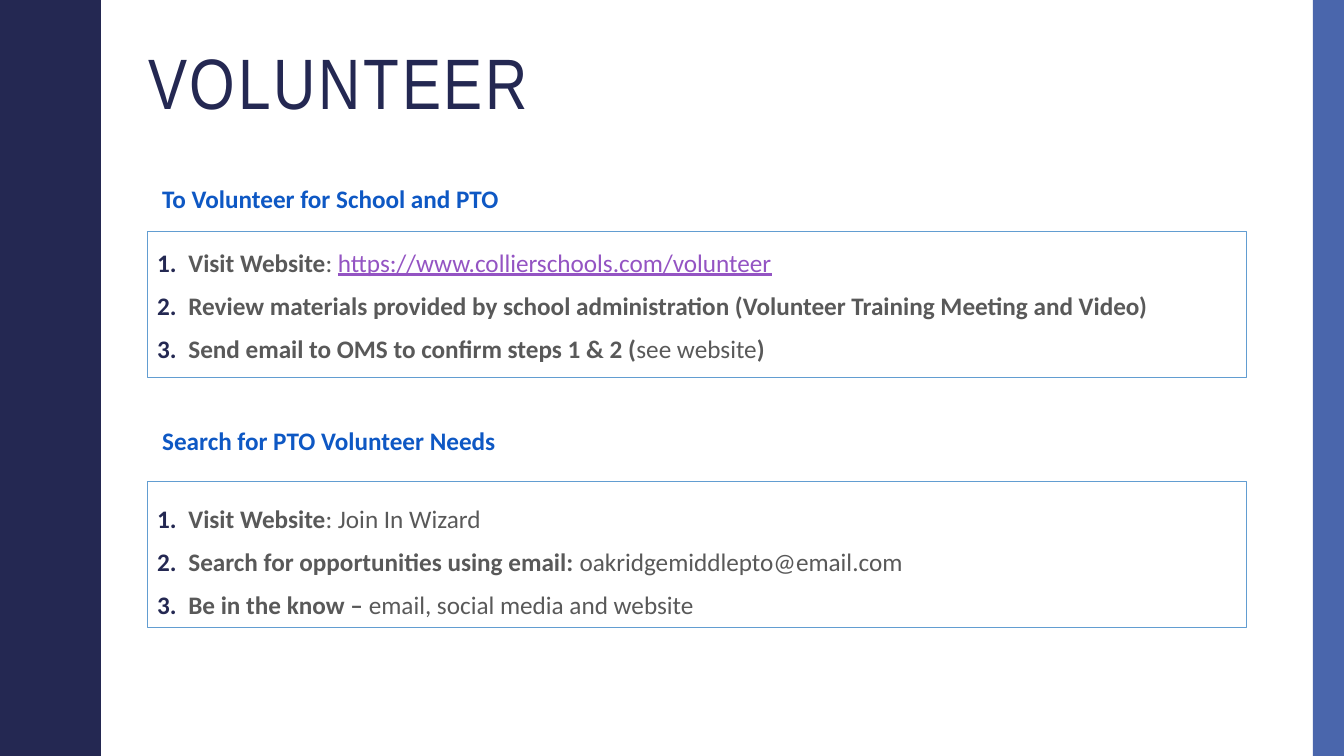
"""Build the volunteer slide: a wavy side band, a title and two numbered lists."""
from dataclasses import dataclass

from lxml import etree
from pptx import Presentation
from pptx import util as u
from pptx.dml.color import RGBColor
from pptx.enum import shapes, text
from pptx.oxml import ns


@dataclass(frozen=True)
class Theme:
    navy: str = "242852"
    blue: str = "4A66AC"
    frame: str = "629DD1"
    heading: str = "0E58C4"
    body: str = "595959"
    link: str = "9454C3"
    title_font: str = "Arial Narrow"
    body_font: str = "Calibri"
    title_size: int = 51
    body_size: int = 18


theme = Theme()


def add_span(para, words, color, bold=False, font=theme.body_font, size=theme.body_size):
    span = para.add_run()
    span.text = words
    span.font.name = font
    span.font.size = u.Pt(size)
    span.font.bold = bold
    span.font.color.rgb = RGBColor.from_string(color)
    return span


def paint(shape, fill=None, line=None):
    shape.shadow.inherit = False
    if fill:
        shape.fill.solid()
        shape.fill.fore_color.rgb = RGBColor.from_string(fill)
    else:
        shape.fill.background()
    if line:
        shape.line.color.rgb = RGBColor.from_string(line)
        shape.line.width = u.Pt(0.75)
    else:
        shape.line.fill.background()


deck = Presentation()
deck.slide_width, deck.slide_height = u.Inches(13.33), u.Inches(7.5)
page = deck.slides.add_slide(deck.slide_layouts[5])

half_wave = [(0.78, 0), (0.78, 0.07), (0.79, 0.14), (0.8, 0.2), (0.81, 0.25),
             (0.83, 0.29), (0.85, 0.33), (0.87, 0.38), (0.89, 0.42), (0.91, 0.46),
             (0.93, 0.5), (0.95, 0.55), (0.96, 0.61), (0.97, 0.68), (0.97, 0.75)]
period = 1.5
full_wave = half_wave + [(x, period - y) for x, y in reversed(half_wave[:-1])]
edge = [(x, y + period * turn) for turn in range(5) for x, y in full_wave]
builder = page.shapes.build_freeform(0, 0, scale=u.Inches(1))
builder.add_line_segments(edge + [(0, 7.5)], close=True)
paint(builder.convert_to_shape(), fill=theme.navy)

side_bar = page.shapes.add_shape(shapes.MSO_SHAPE.RECTANGLE, u.Inches(13.02), 0,
                                 u.Inches(0.31), u.Inches(7.5))
paint(side_bar, fill=theme.blue)

title = page.shapes.title
title.left, title.top = u.Inches(1.37), u.Inches(0.42)
title.width, title.height = u.Inches(11.13), u.Inches(1.63)
title.text_frame.auto_size = text.MSO_AUTO_SIZE.NONE
title.text_frame.vertical_anchor = text.MSO_ANCHOR.TOP
para = title.text_frame.paragraphs[0]
para.alignment = text.PP_ALIGN.LEFT
para.line_spacing = 0.9
span = add_span(para, "VOLUNTEER", theme.navy, font=theme.title_font, size=theme.title_size)
span.font._element.set("spc", "200")

sections = [
    ("To Volunteer for School and PTO", 1.77, 2.3, 2.37, [
        [("Visit Website", "bold"), (": ", "plain"),
         ("https://www.collierschools.com/volunteer", "link")],
        [("Review materials provided by school administration "
          "(Volunteer Training Meeting and Video)", "bold")],
        [("Send email to OMS to confirm steps 1 & 2 (", "bold"),
         ("see website", "plain"), (")", "bold")],
    ]),
    ("Search for PTO Volunteer Needs", 4.17, 4.78, 4.91, [
        [("Visit Website", "bold"), (": Join In Wizard", "plain")],
        [("Search for opportunities using email: ", "bold"),
         ("oakridgemiddlepto@email.com", "plain")],
        [("Be in the know – ", "bold"), ("email, social media and website", "plain")],
    ]),
]

for heading, heading_top, frame_top, list_top, steps in sections:
    box = page.shapes.add_textbox(u.Inches(1.51), u.Inches(heading_top),
                                  u.Inches(5.49), u.Inches(0.4))
    box.text_frame.word_wrap = True
    add_span(box.text_frame.paragraphs[0], heading, theme.heading, bold=True)

    frame = page.shapes.add_shape(shapes.MSO_SHAPE.RECTANGLE, u.Inches(1.46),
                                  u.Inches(frame_top), u.Inches(10.9), u.Inches(1.45))
    paint(frame, line=theme.frame)

    box = page.shapes.add_textbox(u.Inches(1.46), u.Inches(list_top),
                                  u.Inches(11.22), u.Inches(0.8))
    box.text_frame.word_wrap = True
    for index, step in enumerate(steps):
        para = box.text_frame.add_paragraph() if index else box.text_frame.paragraphs[0]
        para.line_spacing = 1.1
        para.space_before = u.Pt(7 if index else 0)
        layout = para._p.get_or_add_pPr()
        layout.set("marL", str(u.Inches(0.31)))
        layout.set("indent", str(-u.Inches(0.31)))
        bullet_color = etree.SubElement(layout, ns.qn("a:buClr"))
        etree.SubElement(bullet_color, ns.qn("a:srgbClr"), val=theme.navy)
        etree.SubElement(layout, ns.qn("a:buAutoNum"), type="arabicPeriod")
        for words, style in step:
            color = theme.link if style == "link" else theme.body
            span = add_span(para, words, color, bold=style == "bold")
            span.font.underline = style == "link"

deck.save("out.pptx")
